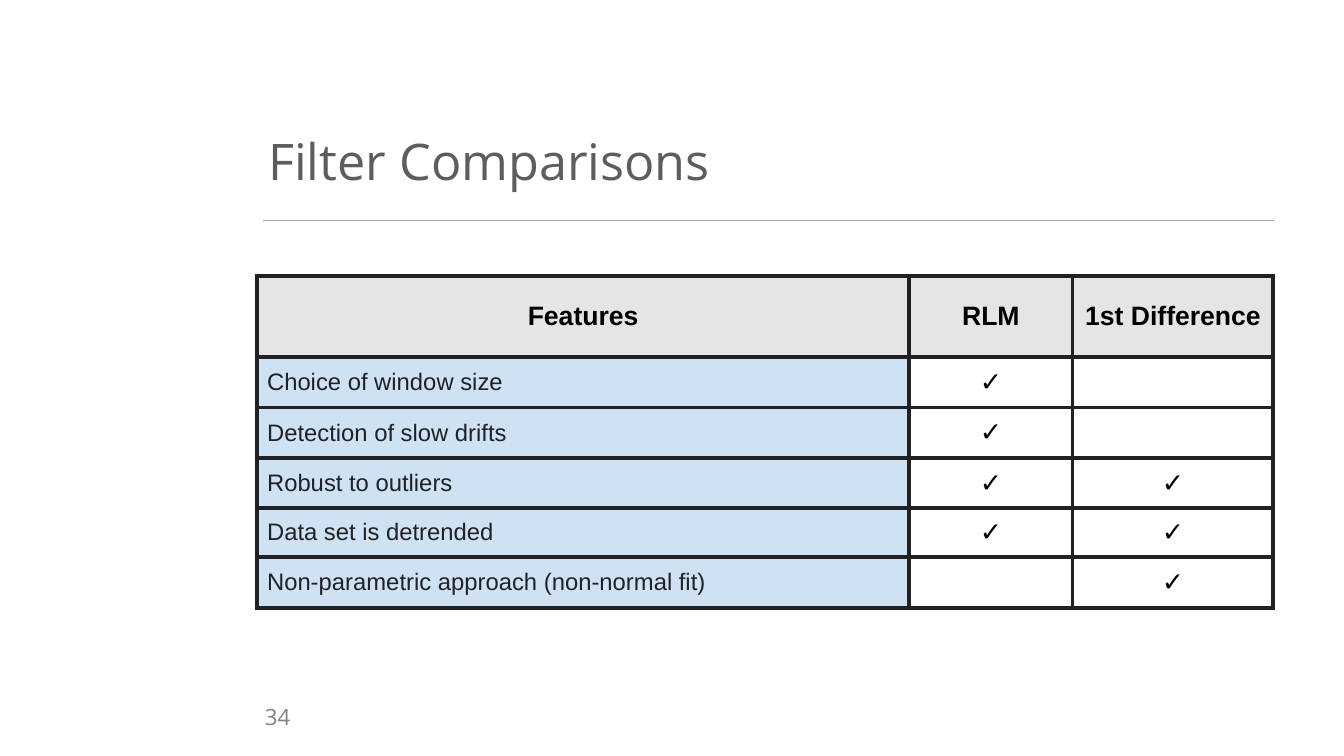
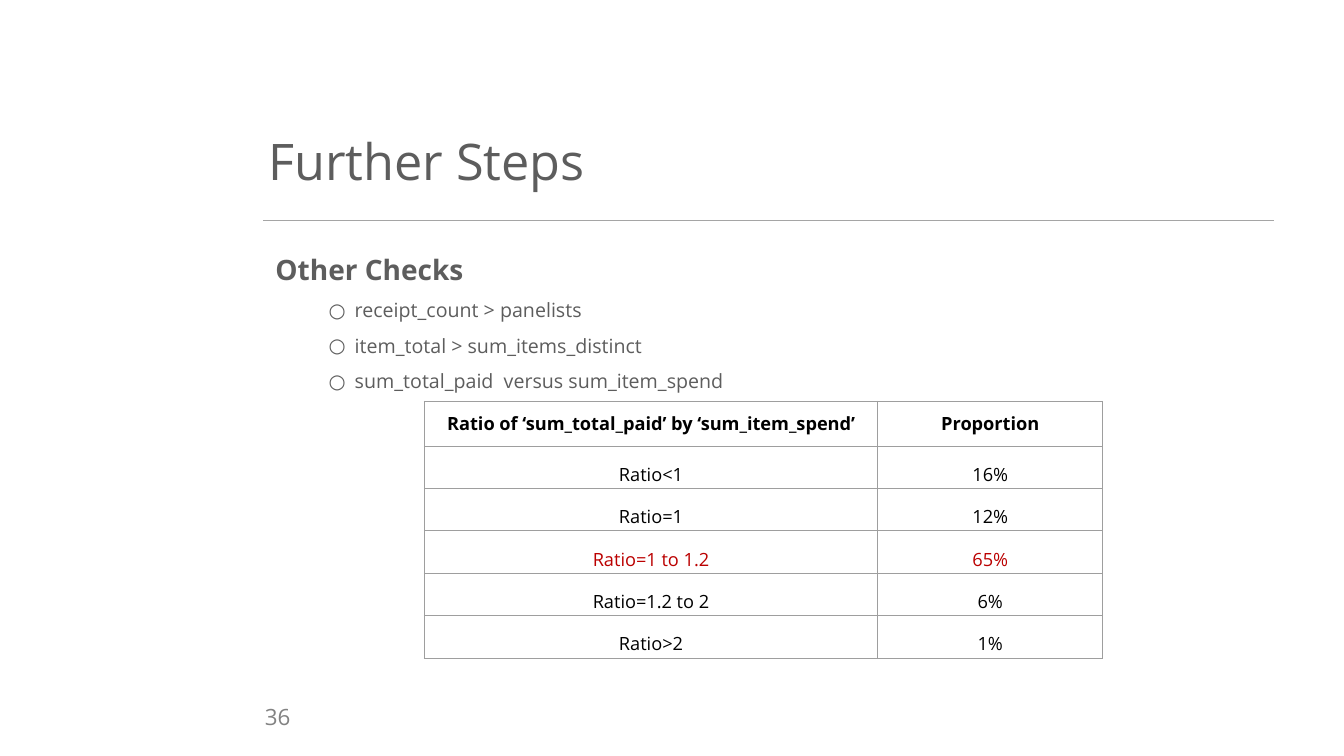
from lxml.etree import SubElement as Sub
from pptx import Presentation
from pptx.dml.color import RGBColor as Rgb
from pptx.enum.shapes import MSO_CONNECTOR as Link
from pptx.enum.text import MSO_ANCHOR as Anchor, MSO_AUTO_SIZE as Fit, PP_ALIGN as Align
from pptx.oxml.ns import qn
from pptx.util import Cm, Pt

WHITE = Rgb(0xFF, 0xFF, 0xFF)
BLACK = Rgb(0, 0, 0)
INK = Rgb(0x20, 0x21, 0x24)
GREY = Rgb(0x5D, 0x5D, 0x5D)
PALE = Rgb(0x82, 0x82, 0x82)
RULE = Rgb(0xA5, 0xA5, 0xA5)
GRID = Rgb(0x9E, 0x9E, 0x9E)
HEAD = Rgb(0xE5, 0xE5, 0xE5)
BLUE = Rgb(0xCF, 0xE2, 0xF3)
RED = Rgb(0xBB, 0, 0)
SANS = "Open Sans"
ARIAL = "Arial"
PAD = 0.13
CHECK = "✓"

FILTERS = [
    ("Features", "RLM", "1st Difference"),
    ("Choice of window size", CHECK, ""),
    ("Detection of slow drifts", CHECK, ""),
    ("Robust to outliers", CHECK, CHECK),
    ("Data set is detrended", CHECK, CHECK),
    ("Non-parametric approach (non-normal fit)", "", CHECK),
]
RATIOS = [
    ("Ratio of ‘sum_total_paid’ by ‘sum_item_spend’", "Proportion"),
    ("Ratio<1", "16%"),
    ("Ratio=1", "12%"),
    ("Ratio=1 to 1.2", "65%"),
    ("Ratio=1.2 to 2", "6%"),
    ("Ratio>2", "1%"),
]
CHECKS = [
    "receipt_count > panelists",
    "item_total > sum_items_distinct",
    "sum_total_paid  versus sum_item_spend",
]


def write(para, text, size, color, font=SANS, bold=False, align=Align.LEFT, space=1.0):
    para.alignment = align
    para.line_spacing = space
    para.space_before = Pt(0)
    run = para.add_run()
    run.text = text
    run.font.name = font
    run.font.size = Pt(size)
    run.font.bold = bold
    run.font.color.rgb = color


def place(box, left, top, width, height, anchor=Anchor.MIDDLE):
    box.left, box.top, box.width, box.height = map(Cm, (left, top, width, height))
    frame = box.text_frame
    frame.word_wrap = True
    frame.auto_size = Fit.NONE
    frame.vertical_anchor = anchor
    frame.margin_left = frame.margin_right = Cm(PAD)
    frame.margin_top = frame.margin_bottom = Cm(PAD)
    return frame


def start(deck, layout, title, page):
    slide = deck.slides.add_slide(deck.slide_layouts.get_by_name(layout))
    frame = place(slide.shapes.title, 6.63, 3.23, 16.33, 1.8)
    write(frame.paragraphs[0], title, 36, GREY, space=0.9)
    line = slide.shapes.add_connector(
        Link.STRAIGHT, Cm(6.63), Cm(5.56), Cm(32.1), Cm(5.56))
    line.line.color.rgb = RULE
    line.line.width = Pt(1)
    Sub(line._element.spPr, qn("a:effectLst"))
    box = slide.shapes.add_textbox(0, 0, 0, 0)
    frame = place(box, 6.3, 17.58, 1.15, 0.94)
    frame.word_wrap = False
    write(frame.paragraphs[0], page, 16, PALE, align=Align.RIGHT)
    return slide


def bullet(para):
    para.level = 1
    props = para._p.get_or_add_pPr()
    props.set("marL", str(Cm(2)))
    props.set("indent", str(-Cm(0.66)))
    tint = Sub(props, qn("a:buClr"))
    Sub(tint, qn("a:srgbClr"), val=str(GREY))
    Sub(props, qn("a:buFont"), typeface=SANS)
    Sub(props, qn("a:buChar"), char="○")


def border(cell, color, width):
    props = cell._tc.get_or_add_tcPr()
    for side in ("lnL", "lnR", "lnT", "lnB"):
        edge = Sub(props, qn(f"a:{side}"), w=str(Pt(width)))
        fill = Sub(edge, qn("a:solidFill"))
        Sub(fill, qn("a:srgbClr"), val=str(color))


def grid(slide, data, left, top, widths, heights, color, width):
    frame = slide.shapes.add_table(
        len(data), len(widths), Cm(left), Cm(top), Cm(sum(widths)), Cm(sum(heights)))
    table = frame.table
    table.first_row = table.horz_banding = False
    for col, size in zip(table.columns, widths):
        col.width = Cm(size)
    for row, size in zip(table.rows, heights):
        row.height = Cm(size)
    for cell in table.iter_cells():
        border(cell, color, width)
    return table


def fill(cell, color, pad_x, pad_y, anchor):
    cell.fill.solid()
    cell.fill.fore_color.rgb = color
    cell.margin_left = cell.margin_right = Cm(pad_x)
    cell.margin_top = cell.margin_bottom = Cm(pad_y)
    cell.vertical_anchor = anchor
    return cell.text_frame.paragraphs[0]


def compare(slide):
    table = grid(slide, FILTERS, 6.48, 6.95, (16.43, 4.12, 5.06),
                 [2.04] + [1.25] * 5, INK, 3)
    for r, row in enumerate(FILTERS):
        for c, text in enumerate(row):
            label = r > 0 and c == 0
            shade = HEAD if r == 0 else BLUE if label else WHITE
            para = fill(table.cell(r, c), shade, 0.25, 0.25, Anchor.MIDDLE)
            if label:
                write(para, text, 17, INK, ARIAL)
            elif text:
                write(para, text, 19, BLACK, ARIAL, r == 0, Align.CENTER)


def share(slide):
    table = grid(slide, RATIOS, 10.69, 10.11, (11.43, 5.67),
                 [1.13] + [1.07] * 5, GRID, 0.75)
    for r, row in enumerate(RATIOS):
        head = r == 0
        look = (0.25, 0.25, Anchor.TOP) if head else (0.08, 0.05, Anchor.BOTTOM)
        color = RED if row[1] == "65%" else BLACK
        for c, text in enumerate(row):
            para = fill(table.cell(r, c), WHITE, *look)
            write(para, text, 13, color, bold=head, align=Align.CENTER,
                  space=1.0 if head else 1.15)


def steps(slide):
    frame = place(slide.placeholders[1], 6.81, 5.82, 24.84, 3.91, Anchor.TOP)
    para = frame.paragraphs[0]
    props = para._p.get_or_add_pPr()
    props.set("marL", "0")
    props.set("indent", "0")
    Sub(props, qn("a:buNone"))
    write(para, "Other Checks", 20, GREY, bold=True, space=1.5)
    for text in CHECKS:
        para = frame.add_paragraph()
        bullet(para)
        write(para, text, 14, GREY, space=1.5)


def main():
    deck = Presentation()
    deck.slide_width, deck.slide_height = Cm(33.87), Cm(19.05)
    compare(start(deck, "Title Only", "Filter Comparisons", "34"))
    slide = start(deck, "Title and Content", "Further Steps", "36")
    steps(slide)
    share(slide)
    deck.save("out.pptx")


if __name__ == "__main__":
    main()
